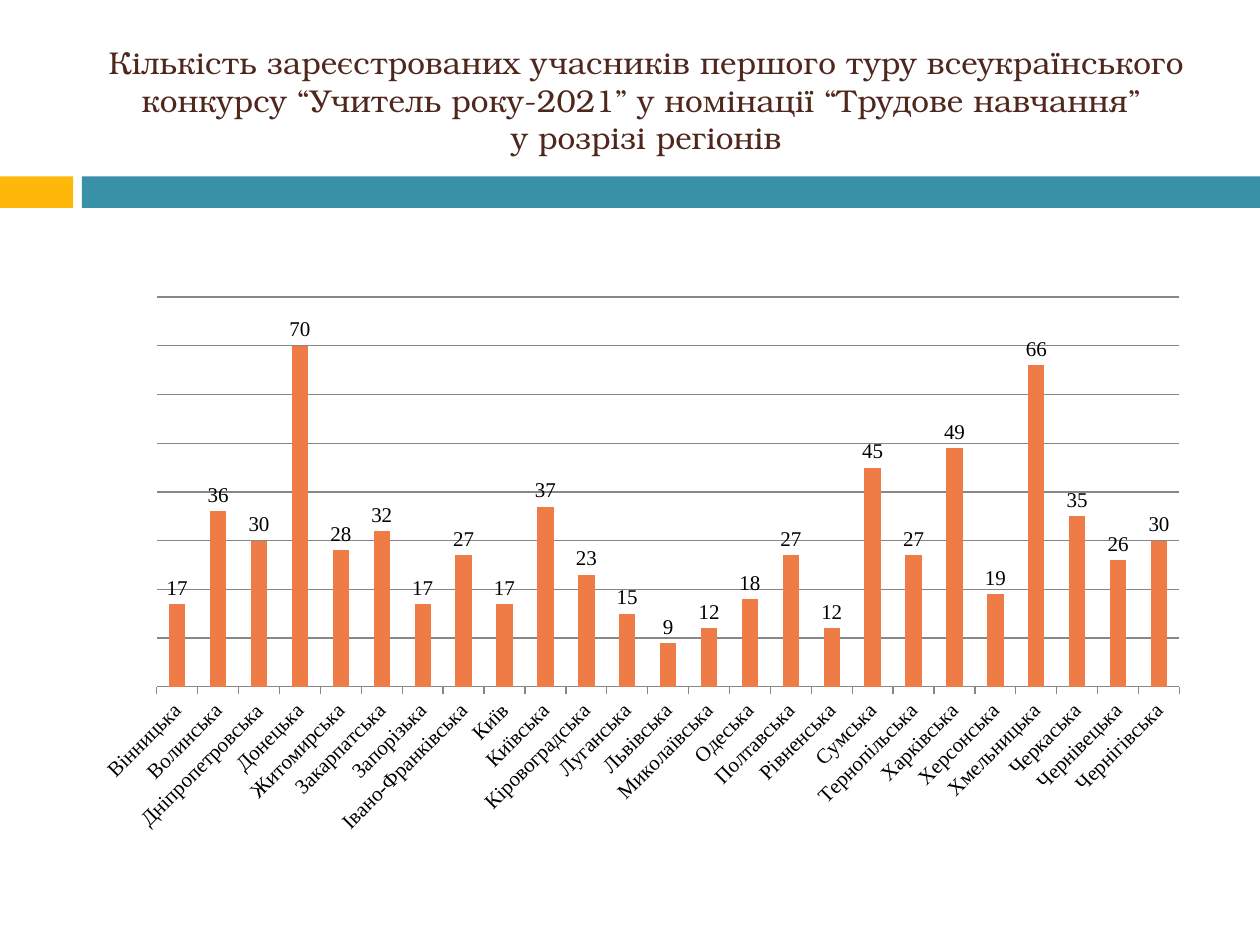
from lxml.etree import SubElement
from pptx import Presentation
from pptx.chart.data import CategoryChartData
from pptx.dml.color import RGBColor
from pptx.enum.chart import XL_CHART_TYPE as ChartType, XL_LABEL_POSITION as LabelPosition
from pptx.enum.chart import XL_TICK_LABEL_POSITION as TickLabels, XL_TICK_MARK as TickMark
from pptx.enum.shapes import MSO_SHAPE as Shape
from pptx.enum.text import MSO_ANCHOR as Anchor, PP_ALIGN as Align
from pptx.oxml.ns import qn
from pptx.util import Pt

COLORS = {"title": "4F271C", "accent": "FEB80A", "band": "3891A7",
          "column": "EF7B47", "text": "000000", "grid": "878787"}
TITLE = [
    "Кількість зареєстрованих учасників першого туру всеукраїнського "
    "конкурсу “Учитель року-2021” у номінації “Трудове навчання” ",
    "у розрізі регіонів",
]
PARTICIPANTS = {
    "Вінницька": 17, "Волинська": 36, "Дніпропетровська": 30, "Донецька": 70,
    "Житомирська": 28, "Закарпатська": 32, "Запорізька": 17,
    "Івано-Франківська": 27, "Київ": 17, "Київська": 37, "Кіровоградська": 23,
    "Луганська": 15, "Львівська": 9, "Миколаївська": 12, "Одеська": 18,
    "Полтавська": 27, "Рівненська": 12, "Сумська": 45, "Тернопільська": 27,
    "Харківська": 49, "Херсонська": 19, "Хмельницька": 66, "Черкаська": 35,
    "Чернівецька": 26, "Чернігівська": 30,
}
BANDS = [("accent", 0, 41.8), ("band", 46.8, 673.2)]
BAND_TOP, BAND_HEIGHT = 100.8, 18
TITLE_BOX = (48.24, 18, 642.24, 77.76)
CHART_BOX = (44.64, 163.44, 642.24, 318.24)
PLOT_AREA = {"x": 0.07, "y": 0.02, "w": 0.91, "h": 0.7}


def color(name):
    """Return the named colour."""
    return RGBColor.from_string(COLORS[name])


def format_font(font, size, name="Times New Roman", fill="text"):
    """Set the size, typeface and colour of a font."""
    font.size, font.name, font.bold = Pt(size), name, False
    font.color.rgb = color(fill)


def write_text(shape, lines, size, name, fill):
    """Write centred lines as one paragraph of a shape."""
    frame = shape.text_frame
    frame.word_wrap, frame.vertical_anchor = True, Anchor.MIDDLE
    paragraph = frame.paragraphs[0]
    paragraph.alignment = Align.CENTER
    for index, line in enumerate(lines):
        if index:
            paragraph.add_line_break()
        run = paragraph.add_run()
        run.text = line
        format_font(run.font, size, name, fill)


def add_band(slide, fill, left, width):
    """Add one flat coloured band below the title."""
    band = slide.shapes.add_shape(Shape.RECTANGLE, Pt(left), Pt(BAND_TOP), Pt(width), Pt(BAND_HEIGHT))
    band.shadow.inherit = False
    band.fill.solid()
    band.fill.fore_color.rgb = color(fill)
    band.line.fill.background()


def set_plot_area(chart):
    """Fix the inner plot area as fractions of the chart."""
    plot_area = chart.plots[0]._element.getparent()
    layout = plot_area.find(qn("c:layout"))
    if layout is None:
        layout = SubElement(plot_area, qn("c:layout"))
        plot_area.insert(0, layout)
    manual = SubElement(layout, qn("c:manualLayout"))
    settings = {"layoutTarget": "inner", "xMode": "edge", "yMode": "edge", **PLOT_AREA}
    for tag, value in settings.items():
        SubElement(manual, qn(f"c:{tag}")).set("val", str(value))


def add_chart(slide):
    """Add the column chart of participants by region."""
    data = CategoryChartData()
    data.categories = list(PARTICIPANTS)
    data.add_series("Series 1", list(PARTICIPANTS.values()))
    chart = slide.shapes.add_chart(ChartType.COLUMN_CLUSTERED, *map(Pt, CHART_BOX), data).chart
    chart.has_legend = chart.has_title = False
    format_font(chart.font, 10, "Calibri")
    set_plot_area(chart)

    plot = chart.plots[0]
    plot.gap_width, plot.vary_by_categories = 150, False
    column_fill = plot.series[0].format.fill
    column_fill.solid()
    column_fill.fore_color.rgb = color("column")
    labels = plot.series[0].data_labels
    labels.show_value, labels.position = True, LabelPosition.OUTSIDE_END
    format_font(labels.font, 12)

    regions = chart.category_axis
    regions.major_tick_mark, regions.minor_tick_mark = TickMark.OUTSIDE, TickMark.NONE
    regions.tick_label_position = TickLabels.NEXT_TO_AXIS
    format_font(regions.tick_labels.font, 12)
    regions._element.find(qn("c:txPr")).find(qn("a:bodyPr")).set("rot", "-2700000")

    values = chart.value_axis
    values.minimum_scale, values.maximum_scale, values.major_unit = 0, 80, 10
    values.has_major_gridlines, values.visible = True, False
    for line in (regions.format.line, values.major_gridlines.format.line):
        line.color.rgb = color("grid")
        line.width = Pt(0.75)


def main():
    """Build and save the slide."""
    presentation = Presentation()
    presentation.slide_width, presentation.slide_height = Pt(720), Pt(540)
    slide = presentation.slides.add_slide(presentation.slide_layouts[5])
    for band in BANDS:
        add_band(slide, *band)
    add_chart(slide)
    title = slide.shapes.title
    title.left, title.top, title.width, title.height = map(Pt, TITLE_BOX)
    write_text(title, TITLE, size=18, name="TeX Gyre Bonum", fill="title")
    presentation.save("out.pptx")


if __name__ == "__main__":
    main()
